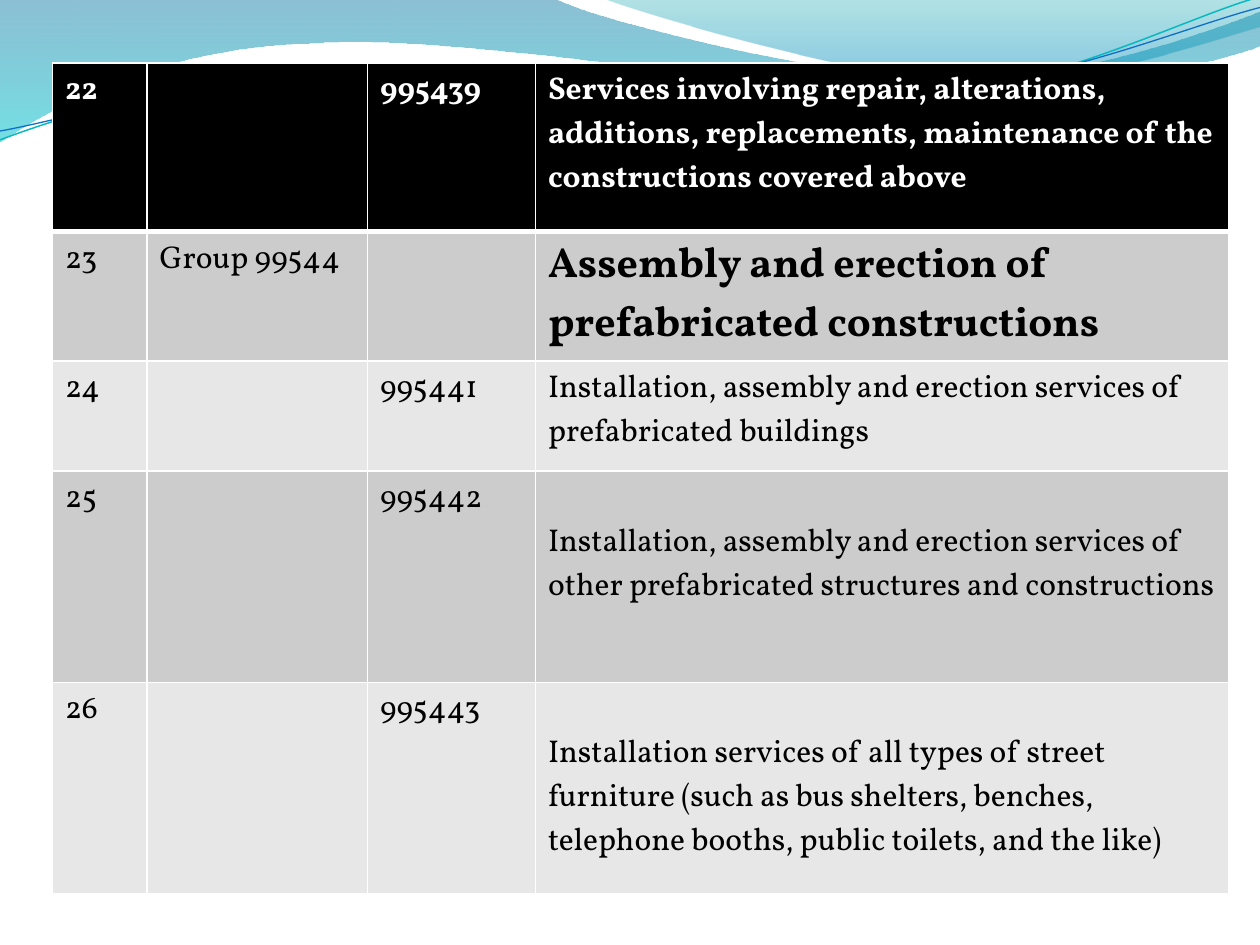
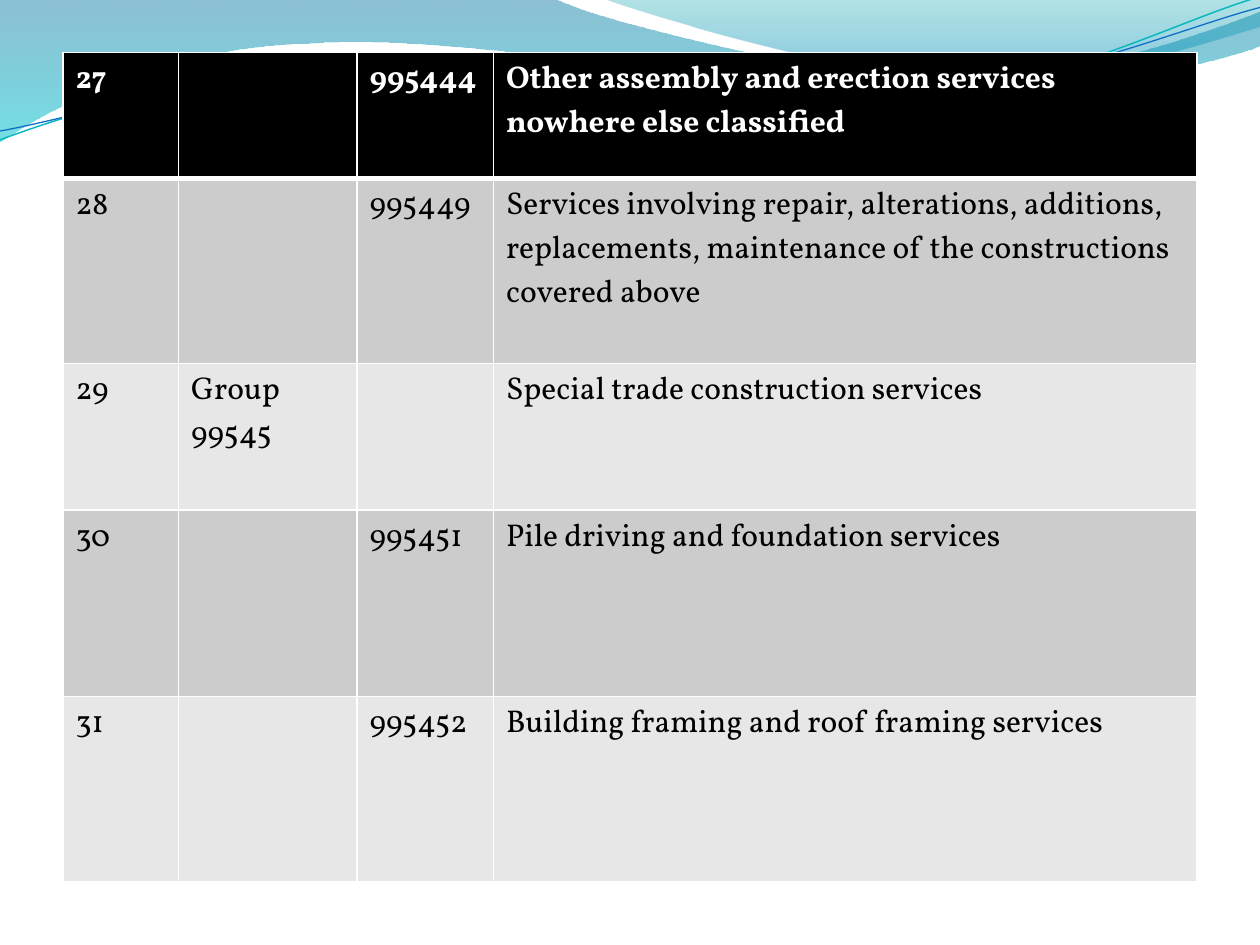
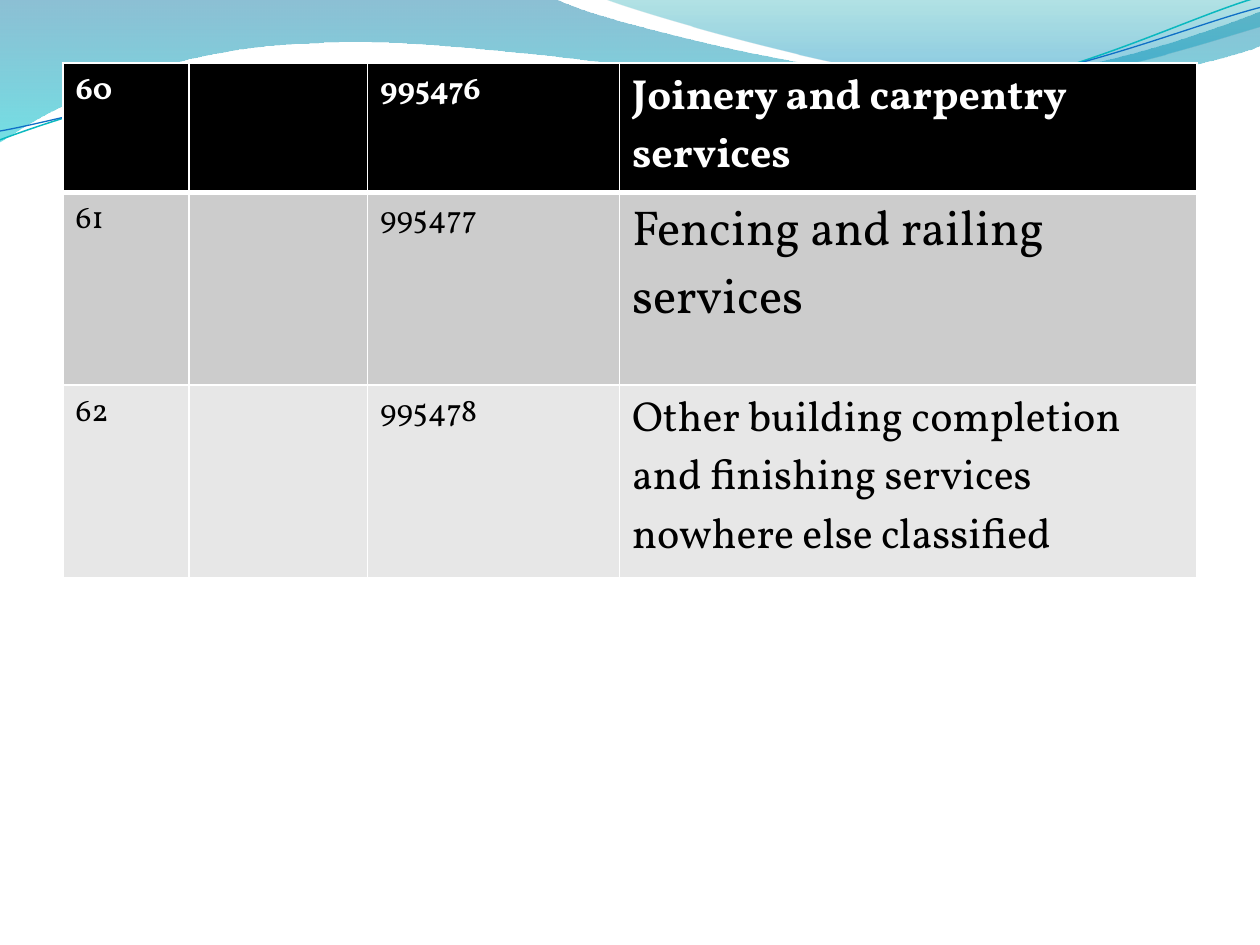
from math import cos, radians, sin
from lxml.etree import SubElement
from pptx import Presentation
from pptx.dml.color import RGBColor as RGB
from pptx.oxml.ns import qn
from pptx.util import Inches, Pt

FONT = "Vollkorn"
WHITE, BLACK = "FFFFFF", "000000"
BANDS = ["CCCCCC", "E7E7E7"]
GRID = 1 / 12
BLANK_LINE = 0.35
TILT = 2.7

WAVES = [
    dict(start=(0, 0), stops=[(0, "0074A1", 45), (1, "00C6CF", 55)], segments=[
        [(4.4, -0.01)],
        [(4.76, 0.17), (6.64, 0.63), (7.58, 0.63)],
        [(8.53, 0.63), (9.58, 0.26), (10, 0.09)],
        [(10.01, 0.36)],
        [(9.83, 0.44), (8.7, 0.76), (7.46, 0.75)],
        [(6.22, 0.75), (3.82, 0.28), (2.57, 0.34)],
        [(1.29, 0.36), (0.46, 0.83), (-0.01, 1.13)],
        [(0, 0)]]),
    dict(start=(4.79, -0.01), stops=[(0, "00A1A9", 30), (0.8, "008BBF", 45)], segments=[
        [(5.09, 0.11), (6.82, 0.62), (7.69, 0.65)],
        [(8.56, 0.69), (9.61, 0.32), (10, 0.21)],
        [(10, 0)],
        [(4.79, -0.01)]]),
    dict(start=(0, 1.11), center=(4.99, 0.58), line=("0AB8BF", 0.85), segments=[
        [(0.48, 0.93), (1.58, 0.57), (2.77, 0.52)],
        [(3.95, 0.47), (5.93, 0.89), (7.13, 0.8)],
        [(8.33, 0.71), (9.38, 0.15), (9.98, -0.02)]]),
    dict(start=(0, 1.04), center=(5, 0.59), line=("0F6FC6", 0.75), segments=[
        [(0.47, 0.96), (1.64, 0.61), (2.83, 0.56)],
        [(4.03, 0.51), (5.97, 0.84), (7.17, 0.75)],
        [(8.36, 0.67), (9.41, 0.21), (10, 0.06)]]),
]

REPAIR = ("Services involving repair, alterations, additions, replacements, "
          "maintenance of the constructions covered above")
SERVICE_LISTS = [
    dict(corner=(5, 6), columns=[9, 21, 16, 66], heights=[1.34, 0.93, 0.87, 1.68, 1.68], rows=[
        ("22", "", "995439", REPAIR),
        ("23", "Group 99544", "", "Assembly and erection of prefabricated constructions"),
        ("24", "", "995441", "Installation, assembly and erection services of prefabricated buildings"),
        ("25", "", "995442", "Installation, assembly and erection services of other prefabricated "
                             "structures and constructions"),
        ("26", "", "995443", "Installation services of all types of street furniture (such as bus "
                             "shelters, benches, telephone booths, public toilets, and the like)")]),
    dict(corner=(6, 5), columns=[11, 17, 13, 67], heights=[1, 1.47, 1.16, 1.48, 1.47], rows=[
        ("27", "", "995444", "Other assembly and erection services nowhere else classified"),
        ("28", "", "995449", REPAIR),
        ("29", "Group 99545", "", "Special trade construction services"),
        ("30", "", "995451", "Pile driving and foundation services"),
        ("31", "", "995452", "Building framing and roof framing services")]),
    dict(corner=(6, 6), columns=[12, 17, 24, 55], heights=[1, 1.53, 1.53], rows=[
        ("60", "", "995476", "Joinery and carpentry services"),
        ("61", "", "995477", "Fencing and railing services"),
        ("62", "", "995478", "Other building completion and finishing services nowhere else classified")]),
]
DESCRIPTION_SIZES = {"23": 24, "60": 24, "61": 28, "62": 24}
BOLD_DESCRIPTIONS = {"23"}
LOWERED_DESCRIPTIONS = {"25", "26"}


def color(hex_code):
    return RGB.from_string(hex_code)


def place(point, center):
    x, y = point
    if center:
        dx, dy, angle = x - center[0], y - center[1], radians(TILT)
        x = center[0] + dx * cos(angle) - dy * sin(angle)
        y = center[1] + dx * sin(angle) + dy * cos(angle)
    return Inches(x), Inches(y)


deck = Presentation()
deck.slide_width, deck.slide_height = Inches(10), Inches(7.5)
blank = deck.slide_layouts[6]
slides = [deck.slides.add_slide(blank) for _ in SERVICE_LISTS]

for index, wave in enumerate(WAVES):
    center, filled = wave.get("center"), "stops" in wave
    outline = slides[0].shapes.build_freeform(*place(wave["start"], center))
    vertices = [place(point, center) for segment in wave["segments"] for point in segment]
    outline.add_line_segments(vertices, close=filled)
    ribbon = outline.convert_to_shape()
    ribbon.shadow.inherit = False
    corners = iter(list(ribbon._element.iter(qn("a:lnTo"))))
    for segment in wave["segments"]:
        corner = next(corners)
        if len(segment) == 3:
            corner.tag = qn("a:cubicBezTo")
            for _ in range(2):
                follower = next(corners)
                corner.append(follower[0])
                follower.getparent().remove(follower)
    if filled:
        ribbon.line.fill.background()
        ribbon.fill.gradient()
        ribbon.fill.gradient_angle = 270
        for stop, (position, tint, _) in zip(ribbon.fill.gradient_stops, wave["stops"]):
            stop.position = position
            stop.color.rgb = color(tint)
        for tint, (_, _, opacity) in zip(ribbon._element.iter(qn("a:srgbClr")), wave["stops"]):
            SubElement(tint, qn("a:alpha"), val=str(opacity * 1000))
    else:
        ribbon.rotation = 360 - TILT
        ribbon.fill.background()
        ribbon.line.color.rgb = color(wave["line"][0])
        ribbon.line.width = Pt(wave["line"][1])
    ribbon._element.nvSpPr.cNvPr.set("id", str(20 + index))
    blank.shapes._spTree.append(ribbon._element)

for slide, services in zip(slides, SERVICE_LISTS):
    columns, heights, rows = services["columns"], services["heights"], services["rows"]
    left, top = (GRID * steps for steps in services["corner"])
    bounds = [left, top, GRID * sum(columns), sum(heights)]
    table = slide.shapes.add_table(len(rows), len(columns), *map(Inches, bounds)).table
    for column, steps in zip(table.columns, columns):
        column.width = Inches(GRID * steps)
    for row, height in zip(table.rows, heights):
        row.height = Inches(height)

    for r, entry in enumerate(rows):
        number, header = entry[0], r == 0
        for c, text in enumerate(entry):
            cell = table.cell(r, c)
            description = c == 3
            borders = {"L": 1, "R": 1, "T": 3 if r == 1 else 1, "B": 3 if header else 1}
            for side, points in borders.items():
                border = SubElement(cell._tc.get_or_add_tcPr(), qn("a:ln" + side), w=str(Pt(points)))
                SubElement(SubElement(border, qn("a:solidFill")), qn("a:srgbClr"), val=WHITE)
            cell.fill.solid()
            cell.fill.fore_color.rgb = color(BLACK if header else BANDS[(r - 1) % 2])
            if description and number in LOWERED_DESCRIPTIONS:
                cell.margin_top = Inches(0.05 + BLANK_LINE)
            cell.text = text
            font = cell.text_frame.paragraphs[0].font
            font.name = FONT
            font.size = Pt(DESCRIPTION_SIZES.get(number, 18) if description else 18)
            font.bold = header or (description and number in BOLD_DESCRIPTIONS)
            font.color.rgb = color(WHITE if header else BLACK)

deck.save("out.pptx")
